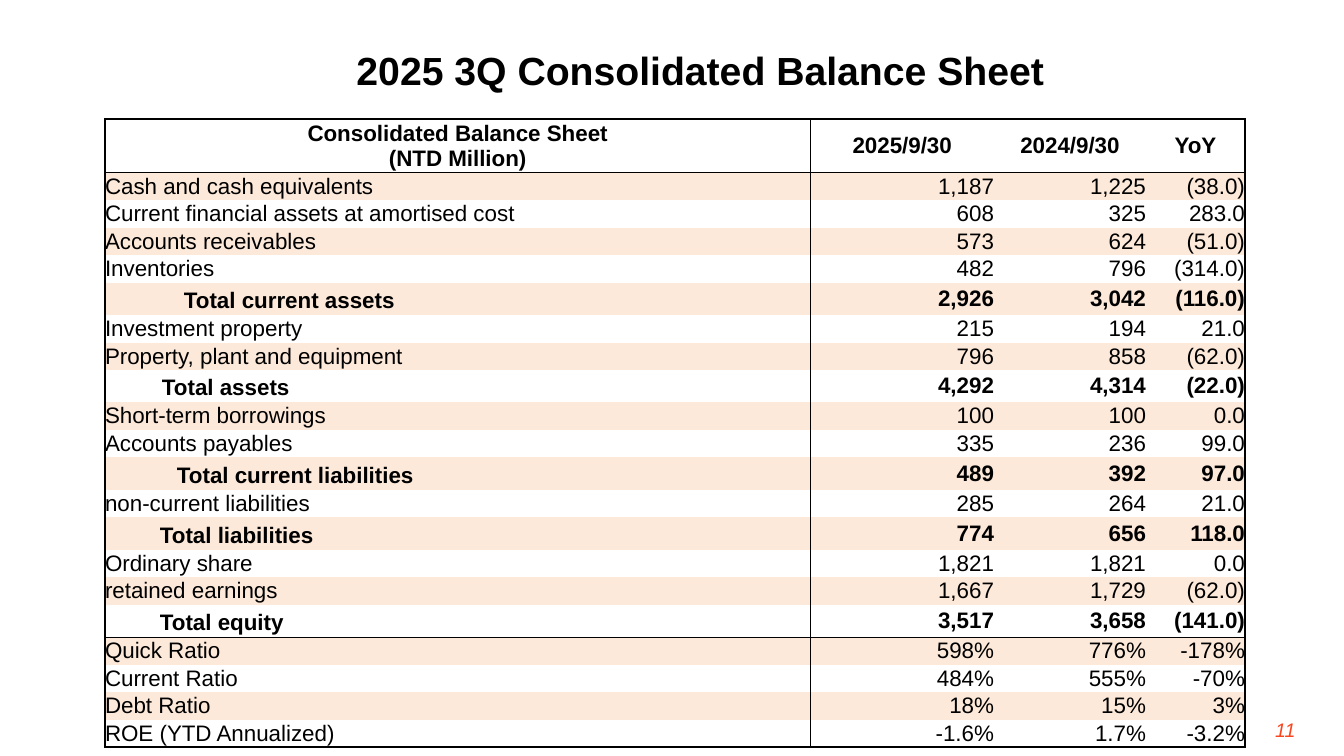
"""Build the 2025 3Q consolidated balance sheet slide."""
from dataclasses import dataclass

from lxml import etree
from pptx import Presentation
from pptx.dml.color import RGBColor
from pptx.enum.text import MSO_ANCHOR, MSO_AUTO_SIZE, PP_ALIGN
from pptx.oxml.ns import qn
from pptx.util import Emu, Pt

LEFT, CENTER, RIGHT = PP_ALIGN.LEFT, PP_ALIGN.CENTER, PP_ALIGN.RIGHT
TOP, MIDDLE = MSO_ANCHOR.TOP, MSO_ANCHOR.MIDDLE
NO_AUTOFIT = MSO_AUTO_SIZE.NONE
SLIDE_WIDTH, SLIDE_HEIGHT = 2688, 1512
EMU_PER_PX = 12192000 / SLIDE_WIDTH
COLORS = {"text": "000000", "band": "FDE9D9", "page": "FFFFFF", "number": "FA461E"}
FONT = "Arial"

TABLE_LEFT, TABLE_TOP = 210, 238
COLUMN_WIDTHS = (1411, 367, 304, 198)
HEADER_HEIGHT, ITEM_HEIGHT, TOTAL_HEIGHT = 100, 55, 65
TOTAL_LABEL_DROP = 8
HEADINGS = ("Consolidated Balance Sheet\n(NTD Million)", "2025/9/30", "2024/9/30", "YoY")


@dataclass(frozen=True)
class Entry:
    """One balance sheet line; an indent marks a total."""
    label: str
    current: str
    previous: str
    change: str
    indent: int = 0

    @property
    def texts(self) -> tuple[str, ...]:
        """Return the texts of the line from left to right."""
        return self.label, self.current, self.previous, self.change


ENTRIES = (
    Entry("Cash and cash equivalents", "1,187", "1,225", "(38.0)"),
    Entry("Current financial assets at amortised cost", "608", "325", "283.0"),
    Entry("Accounts receivables", "573", "624", "(51.0)"),
    Entry("Inventories", "482", "796", "(314.0)"),
    Entry("Total current assets", "2,926", "3,042", "(116.0)", 158),
    Entry("Investment property", "215", "194", "21.0"),
    Entry("Property, plant and equipment", "796", "858", "(62.0)"),
    Entry("Total assets", "4,292", "4,314", "(22.0)", 114),
    Entry("Short-term borrowings", "100", "100", "0.0"),
    Entry("Accounts payables", "335", "236", "99.0"),
    Entry("Total current liabilities", "489", "392", "97.0", 144),
    Entry("non-current liabilities", "285", "264", "21.0"),
    Entry("Total liabilities", "774", "656", "118.0", 110),
    Entry("Ordinary share", "1,821", "1,821", "0.0"),
    Entry("retained earnings", "1,667", "1,729", "(62.0)"),
    Entry("Total equity", "3,517", "3,658", "(141.0)", 110),
    Entry("Quick Ratio", "598%", "776%", "-178%"),
    Entry("Current Ratio", "484%", "555%", "-70%"),
    Entry("Debt Ratio", "18%", "15%", "3%"),
    Entry("ROE (YTD Annualized)", "-1.6%", "1.7%", "-3.2%"),
)
SECTION_ENDS = {0, len(ENTRIES)} | {
    row for row, entry in enumerate(ENTRIES, 1) if entry.label == "Total equity"
}


def px(length: float) -> Emu:
    """Turn px into EMU."""
    return Emu(round(length * EMU_PER_PX))


def rgb(name: str) -> RGBColor:
    """Look up a named colour."""
    return RGBColor.from_string(COLORS[name])


def write(frame, text: str, *, size: int = 16, color: str = "text", bold: bool = False,
          italic: bool = False, align=LEFT) -> None:
    """Put formatted text into a text frame."""
    paragraph = frame.paragraphs[0]
    paragraph.text = text
    paragraph.alignment = align
    for run in paragraph.runs:
        run.font.name = FONT
        run.font.size = Pt(size)
        run.font.bold = bold
        run.font.italic = italic
        run.font.color.rgb = rgb(color)


def set_borders(cell, sides: set[str]) -> None:
    """Draw the given sides of a cell and clear the others."""
    properties = cell._tc.get_or_add_tcPr()
    for side in "LRTB":
        line = etree.SubElement(properties, qn(f"a:ln{side}"), w=str(Pt(1)))
        if side in sides:
            fill = etree.SubElement(line, qn("a:solidFill"))
            etree.SubElement(fill, qn("a:srgbClr"), val=COLORS["text"])
        else:
            etree.SubElement(line, qn("a:noFill"))


def border_sides(row: int, column: int) -> set[str]:
    """Find the ruled sides of a cell from its place in the table."""
    rules = {
        "L": column in (0, 1),
        "R": column in (0, len(COLUMN_WIDTHS) - 1),
        "T": row == 0 or row - 1 in SECTION_ENDS,
        "B": row in SECTION_ENDS,
    }
    return {side for side, ruled in rules.items() if ruled}


def fill_row(table, row: int, texts: tuple[str, ...], *, height: int, bold: bool,
             aligns: tuple, indent: int = 0) -> None:
    """Fill and format one table row."""
    table.rows[row].height = px(height)
    for column, (text, align) in enumerate(zip(texts, aligns)):
        cell = table.cell(row, column)
        is_total_label = indent and column == 0
        cell.margin_left = px(indent if is_total_label else 0)
        cell.margin_top = px(TOTAL_LABEL_DROP if is_total_label else 0)
        cell.margin_right = cell.margin_bottom = 0
        cell.vertical_anchor = MIDDLE
        set_borders(cell, border_sides(row, column))
        if row % 2:
            cell.fill.solid()
            cell.fill.fore_color.rgb = rgb("band")
        else:
            cell.fill.background()
        write(cell.text_frame, text, bold=bold, align=align)


def add_balance_sheet(slide) -> None:
    """Add the balance sheet table."""
    heights = [TOTAL_HEIGHT if entry.indent else ITEM_HEIGHT for entry in ENTRIES]
    table = slide.shapes.add_table(
        len(ENTRIES) + 1, len(COLUMN_WIDTHS), px(TABLE_LEFT), px(TABLE_TOP),
        px(sum(COLUMN_WIDTHS)), px(HEADER_HEIGHT + sum(heights))).table
    table.first_row = table.horz_banding = False
    for column, width in zip(table.columns, COLUMN_WIDTHS):
        column.width = px(width)
    fill_row(table, 0, HEADINGS, height=HEADER_HEIGHT, bold=True, aligns=(CENTER,) * 4)
    for row, (entry, height) in enumerate(zip(ENTRIES, heights), 1):
        fill_row(table, row, entry.texts, height=height, bold=entry.indent > 0,
                 aligns=(LEFT, RIGHT, RIGHT, RIGHT), indent=entry.indent)


def add_title(slide) -> None:
    """Place and format the slide title."""
    title = slide.shapes.title
    title.left, title.top, title.width, title.height = map(px, (685, 81, 1462, 117))
    title.fill.solid()
    title.fill.fore_color.rgb = rgb("page")
    frame = title.text_frame
    frame.auto_size = NO_AUTOFIT
    frame.word_wrap = True
    frame.vertical_anchor = MIDDLE
    frame.margin_left = frame.margin_right = px(28)
    write(frame, "2025 3Q Consolidated Balance Sheet", size=28, bold=True)


def add_page_number(slide) -> None:
    """Add the page number."""
    frame = slide.shapes.add_textbox(*map(px, (2460, 1425, 151, 81))).text_frame
    frame.word_wrap = True
    frame.vertical_anchor = TOP
    write(frame, "11", size=14, color="number", italic=True, align=RIGHT)


def main() -> None:
    """Build and save the slide."""
    presentation = Presentation()
    presentation.slide_width, presentation.slide_height = px(SLIDE_WIDTH), px(SLIDE_HEIGHT)
    slide = presentation.slides.add_slide(presentation.slide_layouts.get_by_name("Title Only"))
    add_title(slide)
    add_page_number(slide)
    add_balance_sheet(slide)
    presentation.save("out.pptx")


if __name__ == "__main__":
    main()
